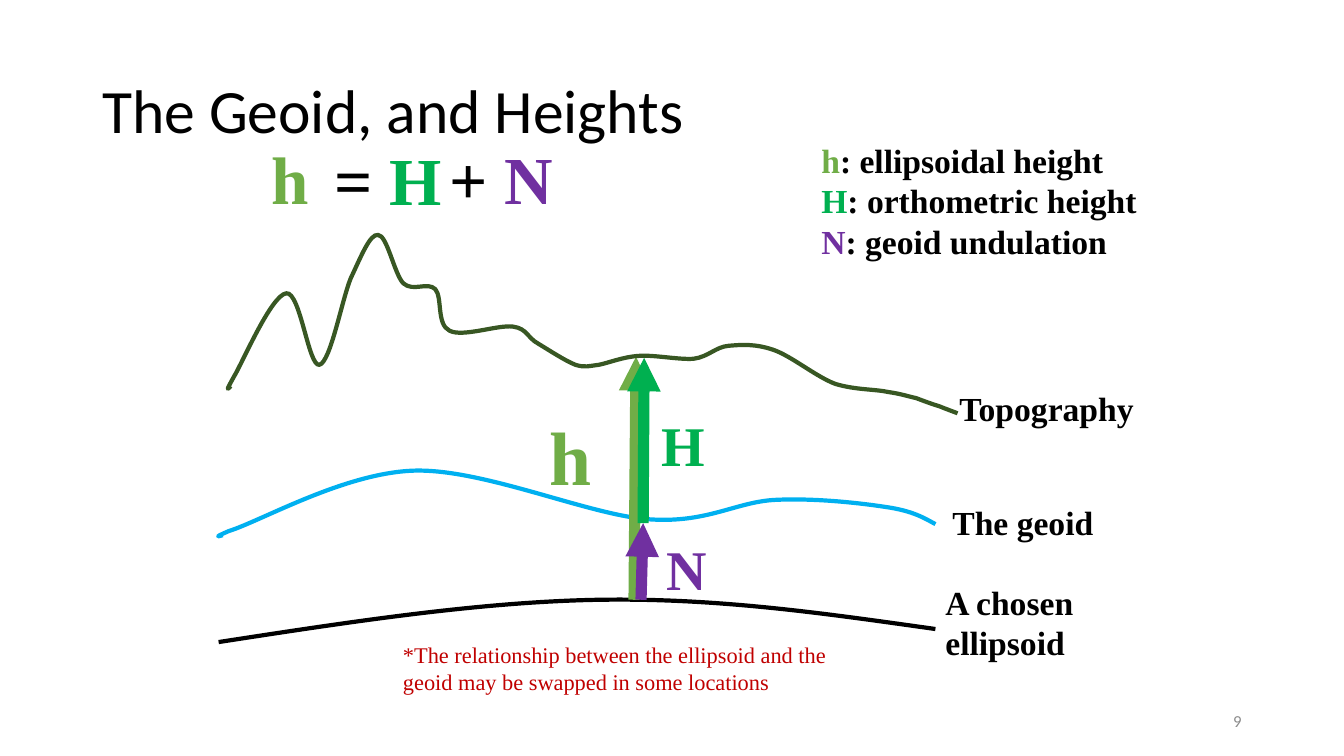
"""Build the slide on the geoid and its three heights."""
from dataclasses import dataclass

from lxml.etree import SubElement
from pptx import Presentation
from pptx.dml.color import RGBColor
from pptx.enum.shapes import MSO_CONNECTOR as Connector
from pptx.enum.text import MSO_ANCHOR as Anchor, MSO_AUTO_SIZE as AutoSize, PP_ALIGN as Align
from pptx.oxml.ns import qn
from pptx.slide import Slide
from pptx.util import Pt

BLACK, GREY, RED = "000000", "8C8C8C", "C00000"
ELLIPSOIDAL, ORTHOMETRIC, UNDULATION = "70AD47", "00B050", "7030A0"
SERIF, SANS = "Times New Roman", "Calibri"

Span = tuple[str, str]
Point = tuple[float, float]


@dataclass
class Label:
    left: float
    top: float
    width: float
    height: float
    size: float
    paras: list[list[Span]]
    font: str = SERIF
    bold: bool = True
    wrap: bool = False
    fit: bool = True
    anchor: Anchor = Anchor.TOP
    align: Align = Align.LEFT
    spacing: float = 1.0


@dataclass
class Arrow:
    start: Point
    end: Point
    color: str


@dataclass
class Curve:
    color: str
    points: list[Point]


LABELS = [
    Label(66, 28.8, 828, 104.4, 44, [[("The Geoid, and Heights", BLACK)]], SANS,
          bold=False, wrap=True, fit=False, anchor=Anchor.MIDDLE, spacing=0.9),
    Label(678, 500.4, 216, 28.8, 12, [[("9", GREY)]], SANS,
          bold=False, wrap=True, fit=False, anchor=Anchor.MIDDLE, align=Align.RIGHT),
    Label(678.2, 273.6, 140.4, 36, 24, [[("Topography", BLACK)]]),
    Label(673.2, 355, 115.9, 36, 24, [[("The geoid", BLACK)]]),
    Label(668.2, 411.8, 113, 65.5, 24, [[("A chosen", BLACK)], [("ellipsoid", BLACK)]]),
    Label(579.6, 96.5, 241.9, 94.3, 24, [
        [("h", ELLIPSOIDAL), (": ellipsoidal height", BLACK)],
        [("H", ORTHOMETRIC), (": orthometric height", BLACK)],
        [("N", UNDULATION), (": geoid undulation", BLACK)],
    ]),
    Label(187.2, 94.3, 41.8, 65.5, 48, [[("h", ELLIPSOIDAL)]]),
    Label(231.8, 95, 91.4, 65.5, 48, [[("= ", BLACK), ("H", ORTHOMETRIC)]]),
    Label(313.9, 94.3, 91.4, 65.5, 48, [[("+ ", BLACK), ("N", UNDULATION)]]),
    Label(385.2, 289.4, 44.6, 72.7, 54, [[("h", ELLIPSOIDAL)]]),
    Label(465.1, 289.4, 46.1, 55.4, 40, [[("H", ORTHOMETRIC)]]),
    Label(468.7, 378, 43.9, 55.4, 40, [[("N", UNDULATION)]]),
    Label(280.8, 454.3, 316.8, 46.1, 16, [[(
        "*The relationship between the ellipsoid and the geoid may be swapped "
        "in some locations", RED)]], bold=False, wrap=True),
]

ARROWS = [
    Arrow((452.9, 428.4), (454.3, 254.9), ELLIPSOIDAL),
    Arrow((457.9, 428.4), (459.4, 373.7), UNDULATION),
    Arrow((459.4, 373.7), (460.1, 255.6), ORTHOMETRIC),
]

GEOID = Curve("00B0F0", [
    (159.1, 382.3),
    (149.8, 385.2), (163.4, 379.4), (163.4, 379.4),
    (186.5, 372.2), (246.2, 337.7), (295.9, 336.2),
    (344.9, 334.8), (419, 367.2), (461.5, 370.8),
    (504.7, 374.4), (524.9, 358.6), (553.7, 357.1),
    (581.8, 355.7), (614.2, 359.3), (632.9, 362.2),
    (652.3, 365), (660.2, 370.1), (668.2, 374.4),
])
ELLIPSOID = Curve(BLACK, [
    (156.2, 458.6),
    (249.8, 444.2), (343.4, 429.8), (428.4, 428.4),
    (514.1, 427), (591.1, 438.5), (668.2, 449.3),
])
TOPOGRAPHY = Curve("385723", [
    (164.9, 275.8),
    (162.7, 277.9), (160.6, 280.8), (167, 269.3),
    (173.5, 258.5), (193.7, 211), (204.5, 209.5),
    (214.6, 208.1), (220.3, 262.1), (228.2, 260.6),
    (236.2, 258.5), (244.1, 214.6), (250.6, 198.7),
    (257.8, 183.6), (264.2, 167), (270, 167.8),
    (276.5, 167.8), (281.5, 195.1), (288, 202.3),
    (295.2, 208.8), (305.3, 200.9), (311, 206.6),
    (316.1, 212.4), (311.8, 231.8), (321.1, 236.2),
    (330.5, 241.2), (355.7, 231.8), (366.5, 233.3),
    (376.6, 234.7), (376.6, 241.2), (384.5, 245.5),
    (391.7, 249.8), (403.9, 257.8), (411.1, 260.6),
    (418.3, 262.8), (420.5, 261.4), (427.7, 260.6),
    (434.9, 259.2), (445, 254.9), (456.5, 254.2),
    (467.3, 253.4), (484.6, 257), (495.4, 256.3),
    (506.2, 254.9), (511.2, 247.7), (520.6, 247),
    (529.9, 246.2), (539.3, 245.5), (552.2, 249.8),
    (565.2, 254.2), (583.2, 269.3), (596.9, 274.3),
    (611.3, 278.6), (625, 277.9), (635, 280.1),
    (644.4, 281.5), (648, 283), (654.5, 284.4),
    (660.2, 286.6), (666, 288.7), (671, 290.2),
    (676.1, 292.3), (680.4, 293.8), (684, 295.2),
])


def paint(target, color: str) -> None:
    """Give a font or a line its colour."""
    target.color.rgb = RGBColor.from_string(color)


def apply(target, values: dict) -> None:
    """Set every attribute named in the format values."""
    for name, value in values.items():
        setattr(target, name, value)


def draw_label(page: Slide, label: Label) -> None:
    """Add a text box with coloured spans."""
    box = page.shapes.add_textbox(
        *map(Pt, (label.left, label.top, label.width, label.height)))
    apply(box.text_frame, {
        "word_wrap": label.wrap,
        "auto_size": AutoSize.SHAPE_TO_FIT_TEXT if label.fit else AutoSize.NONE,
        "vertical_anchor": label.anchor,
    })
    for index, spans in enumerate(label.paras):
        para = box.text_frame.add_paragraph() if index else box.text_frame.paragraphs[0]
        apply(para, {"alignment": label.align, "line_spacing": label.spacing})
        for text, color in spans:
            span = para.add_run()
            span.text = text
            apply(span.font, {"name": label.font, "size": Pt(label.size), "bold": label.bold})
            paint(span.font, color)


def draw_arrow(page: Slide, arrow: Arrow) -> None:
    """Add a thick height arrow."""
    connector = page.shapes.add_connector(
        Connector.STRAIGHT, *map(Pt, (*arrow.start, *arrow.end)))
    connector.line.width = Pt(8)
    paint(connector.line, arrow.color)
    SubElement(connector.line._get_or_add_ln(), qn("a:tailEnd"), type="triangle")
    SubElement(connector._element.spPr, qn("a:effectLst"))


def draw_curve(page: Slide, curve: Curve) -> None:
    """Add an open outline whose points are joined by cubic curves."""
    first, *rest = [(Pt(x), Pt(y)) for x, y in curve.points]
    builder = page.shapes.build_freeform(*first)
    builder.add_line_segments(rest, close=False)
    outline = builder.convert_to_shape()
    outline.shadow.inherit = False
    outline.fill.background()
    outline.line.width = Pt(3)
    paint(outline.line, curve.color)
    segments = list(outline._element.iter(qn("a:lnTo")))
    track = segments[0].getparent()
    for start in range(0, len(segments), 3):
        bend = SubElement(track, qn("a:cubicBezTo"))
        for segment in segments[start:start + 3]:
            bend.append(segment[0])
            track.remove(segment)


def main() -> None:
    """Draw the slide and save it."""
    deck = Presentation()
    apply(deck, {"slide_width": Pt(960), "slide_height": Pt(540)})
    page = deck.slides.add_slide(deck.slide_layouts[6])
    for curve in (GEOID, ELLIPSOID):
        draw_curve(page, curve)
    for arrow in ARROWS:
        draw_arrow(page, arrow)
    draw_curve(page, TOPOGRAPHY)
    for label in LABELS:
        draw_label(page, label)
    deck.save("out.pptx")


if __name__ == "__main__":
    main()
